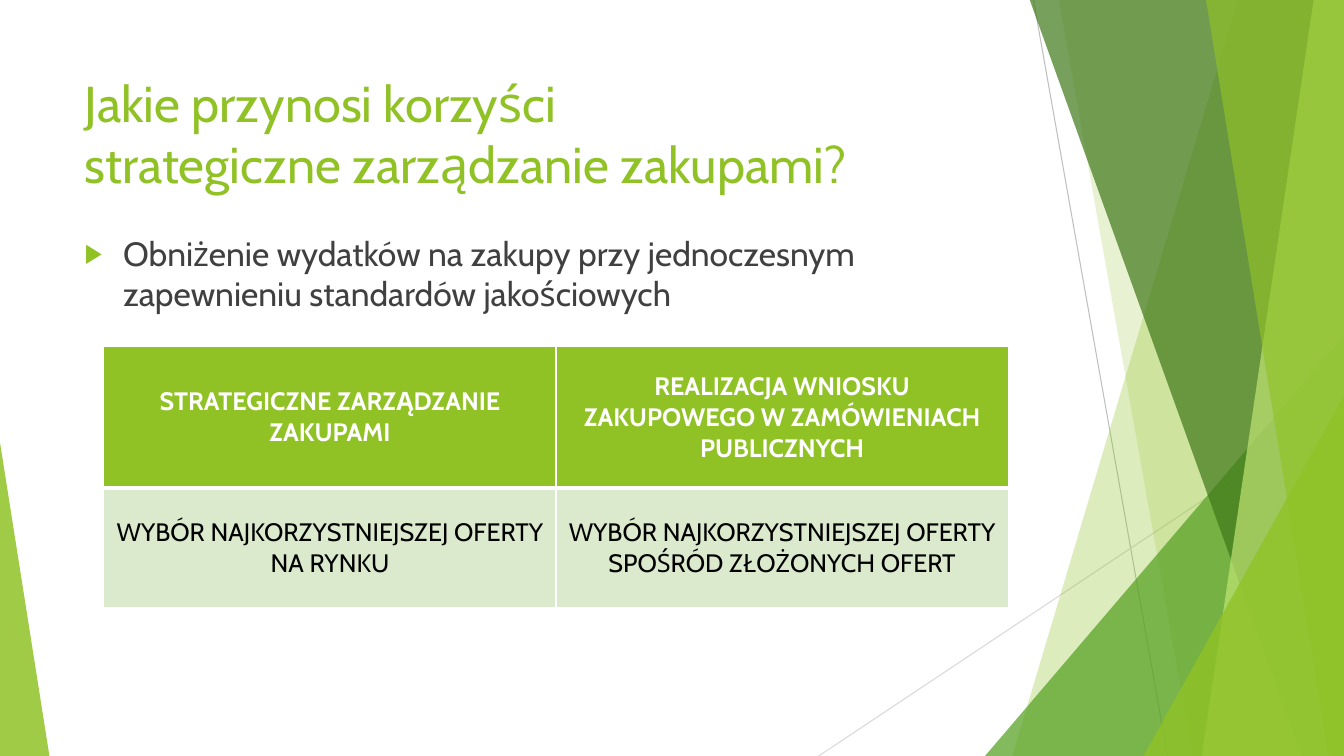
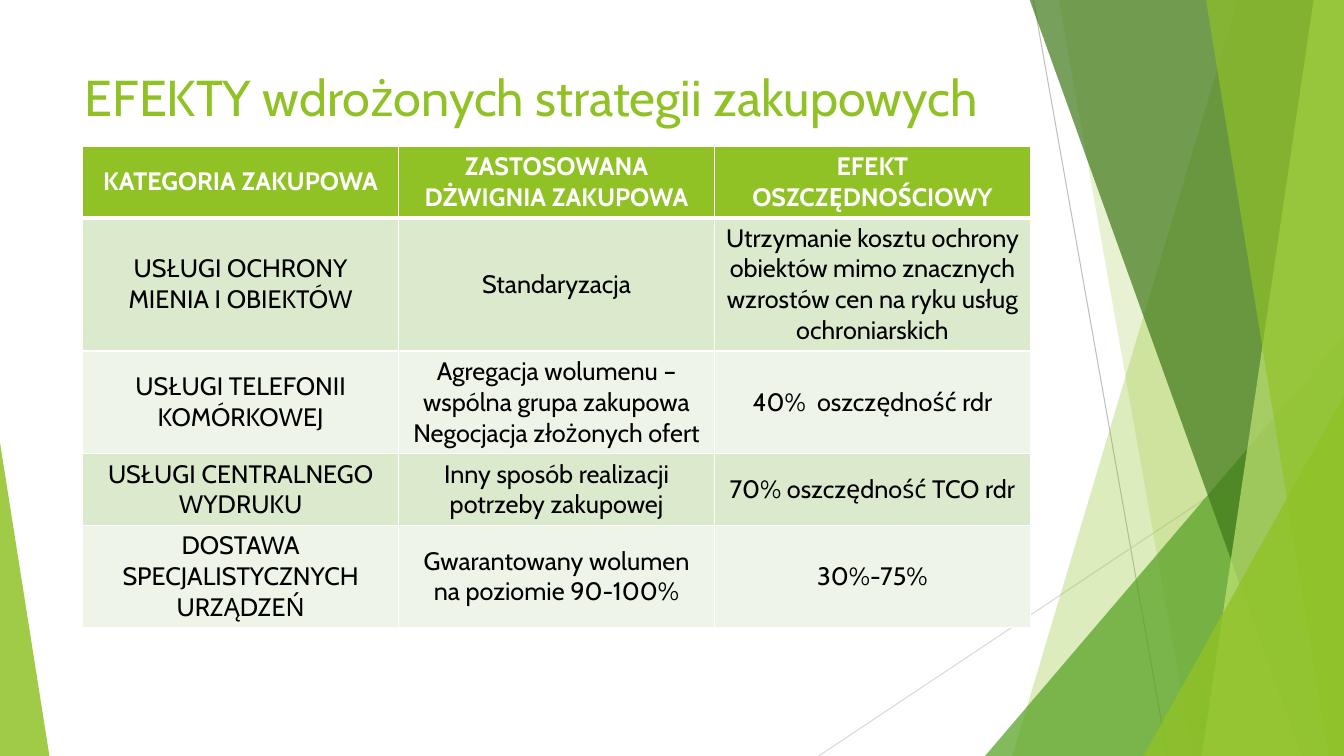
from lxml.etree import SubElement
from pptx import Presentation
from pptx.dml.color import RGBColor
from pptx.enum.shapes import MSO_CONNECTOR, MSO_SHAPE
from pptx.enum.text import MSO_ANCHOR, MSO_AUTO_SIZE, PP_ALIGN
from pptx.oxml import parse_xml
from pptx.oxml.ns import nsdecls, qn
from pptx.util import Inches, Pt

FONT = "Cabin"
WIDTH, HEIGHT = 13.33, 7.5
COLORS = {
    "lime": "90C226", "green": "54A021", "forest": "3F7819", "pale": "C0E474",
    "steep_line": "BFBFBF", "low_line": "D9D9D9", "text": "404040",
    "white": "FFFFFF", "black": "000000", "band_dark": "DBE9CD", "band_light": "EEF4E8",
}

# Backdrop, from back to front
RAYS = [  # start, end, colour
    ((10.25, 0), (11.58, HEIGHT), "steep_line"),
    ((WIDTH, 4.03), (8.12, HEIGHT), "low_line"),
]
FACETS = [
    # band: x at the top, x at the bottom; it reaches the right edge
    # peak: left, top, width, apex position; it stands on the bottom edge
    ("band", (12.28, 10.04), "lime", 30),
    ("band", (10.5, 11.83), "lime", 20),
    ("peak", (9.77, 3.33, 3.56, 1), "green", 72),
    ("band", (10.21, 12.91), "forest", 70),
    ("band", (13.03, 11.92), "pale", 70),
    ("band", (11.96, 13.18), "lime", 65),
    ("peak", (11.34, 3.93, 1.99, 1), "lime", 80),
    ("peak", (0, 4.39, 0.49, 0), "lime", 85),
]

SLIDES = [
    {
        "title": "Jakie przynosi korzyści\nstrategiczne zarządzanie zakupami?",
        "title_box": (0.74, 0.67, 9.4, 1.44),
        "bullets": ["Obniżenie wydatków na zakupy przy jednoczesnym "
                    "zapewnieniu standardów jakościowych"],
        "table_at": (1.03, 3.44, 8.97),
        "row_heights": (1.4, 1.19),
        "rows": [
            ("STRATEGICZNE ZARZĄDZANIE ZAKUPAMI",
             "REALIZACJA WNIOSKU ZAKUPOWEGO W ZAMÓWIENIACH PUBLICZNYCH"),
            ("WYBÓR NAJKORZYSTNIEJSZEJ OFERTY NA RYNKU",
             "WYBÓR NAJKORZYSTNIEJSZEJ OFERTY SPOŚRÓD ZŁOŻONYCH OFERT"),
        ],
    },
    {
        "title": "EFEKTY wdrożonych strategii zakupowych",
        "title_box": (0.74, 0.61, 9.56, 1.2),
        "bullets": [],
        "table_at": (0.82, 1.45, 9.4),
        "row_heights": (0.7, 1.32, 1.02, 0.71, 1.01),
        "rows": [
            ("KATEGORIA ZAKUPOWA", "ZASTOSOWANA DŻWIGNIA ZAKUPOWA",
             "EFEKT OSZCZĘDNOŚCIOWY"),
            ("USŁUGI OCHRONY MIENIA I OBIEKTÓW", "Standaryzacja",
             "Utrzymanie kosztu ochrony obiektów mimo znacznych wzrostów cen "
             "na ryku usług ochroniarskich"),
            ("USŁUGI TELEFONII KOMÓRKOWEJ",
             "Agregacja wolumenu – wspólna grupa zakupowa\nNegocjacja złożonych ofert",
             "40%  oszczędność rdr"),
            ("USŁUGI CENTRALNEGO WYDRUKU", "Inny sposób realizacji potrzeby zakupowej",
             "70% oszczędność TCO rdr"),
            ("DOSTAWA SPECJALISTYCZNYCH URZĄDZEŃ",
             "Gwarantowany wolumen na poziomie 90-100%", "30%-75%"),
        ],
    },
]
BODY_BOX = (0.74, 2.26, 9.4, 4.24)


def rgb(name):
    return RGBColor.from_string(COLORS[name])


def add_run(paragraph, text, size, color, bold=False):
    run = paragraph.add_run()
    run.text = text
    font = run.font
    font.name, font.size, font.bold = FONT, Pt(size), bold
    font.color.rgb = rgb(color)


def place(placeholder, box):
    """Move a placeholder and let its text start at the top."""
    placeholder.left, placeholder.top, placeholder.width, placeholder.height = map(Inches, box)
    frame = placeholder.text_frame
    frame.word_wrap = True
    frame.auto_size = MSO_AUTO_SIZE.NONE
    frame.vertical_anchor = MSO_ANCHOR.TOP
    return frame


def add_ray(shapes, start, end, color):
    ray = shapes.add_connector(MSO_CONNECTOR.STRAIGHT, *map(Inches, start + end))
    ray.line.color.rgb = rgb(color)
    ray.line.width = Pt(0.75)
    SubElement(ray.element.spPr, qn("a:effectLst"))
    return ray


def add_facet(shapes, kind, geometry, color, opacity):
    if kind == "band":
        top_x, bottom_x = geometry
        builder = shapes.build_freeform(Inches(top_x), Inches(-0.01))
        corners = [(WIDTH, -0.01), (WIDTH, HEIGHT), (bottom_x, HEIGHT)]
        builder.add_line_segments([(Inches(x), Inches(y)) for x, y in corners], close=True)
        facet = builder.convert_to_shape()
    else:
        left, top, width, apex = geometry
        facet = shapes.add_shape(MSO_SHAPE.ISOSCELES_TRIANGLE,
                                 *map(Inches, (left, top, width, HEIGHT - top)))
        facet.adjustments[0] = apex
    facet.shadow.inherit = False
    facet.line.fill.background()
    facet.fill.solid()
    facet.fill.fore_color.rgb = rgb(color)
    tint = next(facet.element.spPr.iter(qn("a:srgbClr")))
    SubElement(tint, qn("a:alpha")).set("val", str(opacity * 1000))
    return facet


def add_backdrop(master, slide):
    """Draw the backdrop on a slide, then move it to the master behind everything."""
    parts = [add_ray(slide.shapes, *ray) for ray in RAYS]
    parts += [add_facet(slide.shapes, *facet) for facet in FACETS]
    for index, part in enumerate(parts, start=2):
        master.shapes.element.insert(index, part.element)


def add_title(slide, text, box):
    paragraph = place(slide.shapes.title, box).paragraphs[0]
    paragraph.alignment = PP_ALIGN.LEFT
    for index, line in enumerate(text.split("\n")):
        if index:
            paragraph.add_line_break()
        add_run(paragraph, line, 36, "lime")


def add_bullets(body, bullets):
    frame = place(body, BODY_BOX)
    for index, text in enumerate(bullets):
        paragraph = frame.add_paragraph() if index else frame.paragraphs[0]
        paragraph.space_before = Pt(10)
        add_run(paragraph, text, 24, "text")
        props = paragraph._p.get_or_add_pPr()
        props.set("marL", str(Inches(0.38)))
        props.set("indent", str(-Inches(0.38)))
        bullet_color = SubElement(props, qn("a:buClr"))
        SubElement(bullet_color, qn("a:srgbClr")).set("val", COLORS["lime"])
        SubElement(props, qn("a:buSzPct")).set("val", "80000")
        SubElement(props, qn("a:buFont")).set("typeface", "Arial")
        SubElement(props, qn("a:buChar")).set("char", "▶")


def set_borders(cell, top, bottom):
    """White borders: 1 pt at the sides, the given widths above and below."""
    props = cell._tc.get_or_add_tcPr()
    for index, (side, width) in enumerate([("L", 1), ("R", 1), ("T", top), ("B", bottom)]):
        props.insert(index, parse_xml(
            f'<a:ln{side} {nsdecls("a")} w="{Pt(width)}"><a:solidFill>'
            f'<a:srgbClr val="{COLORS["white"]}"/></a:solidFill></a:ln{side}>'))


def add_banded_table(slide, rows, at, row_heights):
    left, top, width = at
    columns = len(rows[0])
    table = slide.shapes.add_table(
        len(rows), columns, *map(Inches, (left, top, width, sum(row_heights)))).table
    for column in table.columns:
        column.width = Inches(width / columns)
    for r, (texts, height) in enumerate(zip(rows, row_heights)):
        table.rows[r].height = Inches(height)
        header = r == 0
        band = "lime" if header else ("band_light", "band_dark")[r % 2]
        for c, text in enumerate(texts):
            cell = table.cell(r, c)
            cell.vertical_anchor = MSO_ANCHOR.MIDDLE
            cell.fill.solid()
            cell.fill.fore_color.rgb = rgb(band)
            set_borders(cell, top=3 if r == 1 else 1, bottom=3 if header else 1)
            frame = cell.text_frame
            for index, line in enumerate(text.split("\n")):
                paragraph = frame.add_paragraph() if index else frame.paragraphs[0]
                paragraph.alignment = PP_ALIGN.CENTER
                add_run(paragraph, line, 18, "white" if header else "black", header)


def main():
    prs = Presentation()
    prs.slide_width, prs.slide_height = Inches(WIDTH), Inches(HEIGHT)
    title_and_content, title_only = prs.slide_layouts[1], prs.slide_layouts[5]
    for index, content in enumerate(SLIDES):
        bullets = content["bullets"]
        slide = prs.slides.add_slide(title_and_content if bullets else title_only)
        if index == 0:
            add_backdrop(prs.slide_master, slide)
        add_title(slide, content["title"], content["title_box"])
        if bullets:
            add_bullets(slide.placeholders[1], bullets)
        add_banded_table(slide, content["rows"], content["table_at"], content["row_heights"])
    prs.save("out.pptx")


if __name__ == "__main__":
    main()
